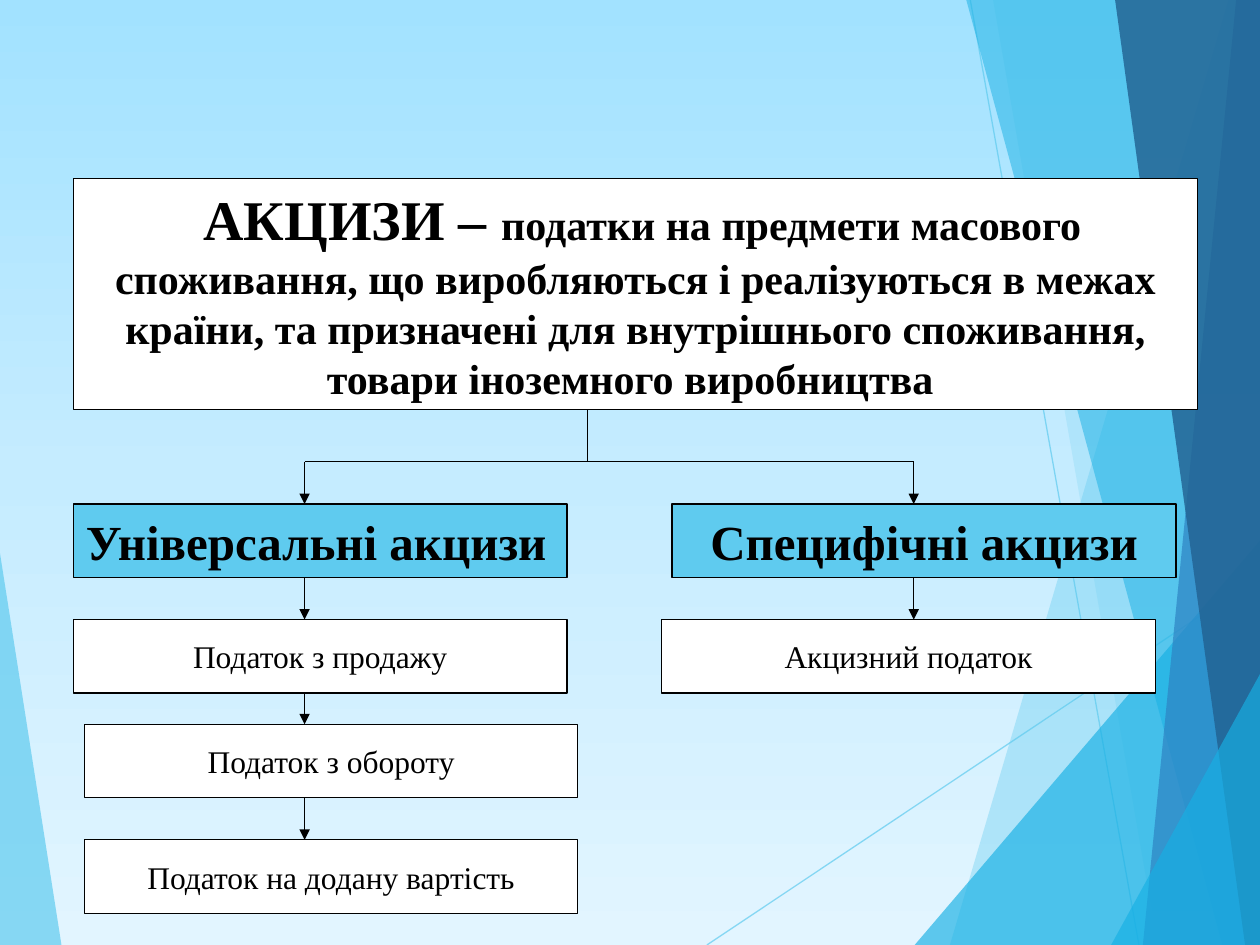
from copy import deepcopy
from pptx import Presentation
from pptx.dml.color import RGBColor
from pptx.enum.shapes import MSO_CONNECTOR, MSO_SHAPE
from pptx.enum.text import MSO_ANCHOR, PP_ALIGN
from pptx.oxml.ns import qn
from pptx.util import Cm, Pt
from lxml.etree import SubElement

# Content
FONT = "Times New Roman"
LEAD = [(" АКЦИЗИ – ", 32, True),
        ("податки на предмети масового споживання, що виробляються і "
         "реалізуються в межах країни, та призначені для внутрішнього "
         "споживання, товари іноземного виробництва ", 24, True)]
# Each branch: arrow axis, then boxes as (left, width, fill, runs)
TREE = [
    (6.14, [
        (1.48, 9.95, "sky", [("Універсальні акцизи", 28, True), (" ", 18, False)]),
        (1.48, 9.95, "white", [("Податок з продажу", 18, False)]),
        (1.7, 9.95, "white", [("Податок з обороту", 18, False)]),
        (1.7, 9.95, "white", [("Податок на додану вартість", 18, False)])]),
    (18.42, [
        (13.55, 10.16, "sky", [("Специфічні акцизи", 28, True)]),
        (13.34, 9.95, "white", [("Акцизний податок", 18, False)])]),
]

# Look and layout, in cm
HEX = {"sky": "5FCBEF", "cyan": "17B0E4", "blue": "2E83C3", "navy": "226292",
       "white": "FFFFFF", "black": "000000",
       "top": "A2E2FF", "mid": "C5ECFF", "low": "E2F5FF"}
WIDE, HIGH = 25.4, 19.05
ROWS = [10.16, 12.49, 14.6, 16.93]
BOX = 1.48
HEAD = (1.48, 3.6, 22.66, 4.66)
STEM, FORK = 11.85, 9.31


def band(top, low):
    """Area right of a slanted edge, given its x at top and bottom."""
    return [(top, 0), (low, HIGH), (WIDE, HIGH), (WIDE, 0)]


def wedge(x, y):
    """Triangle in the bottom right corner."""
    return [(x, HIGH), (WIDE, y), (WIDE, HIGH)]


RAYS = [((14.25, HIGH), (WIDE, 11.61)), ((19.56, 0), (22.96, HIGH))]
FACETS = [
    ([(0, 11.15), (1.24, HIGH), (0, HIGH)], "sky", 70),
    (band(24.77, 19.15), "sky", 36),
    (band(20.02, 23.34), "sky", 20),
    (wedge(18.44, 10.9), "cyan", 66),
    (band(19.48, 24.64), "cyan", 50),
    (band(24.92, 23.04), "blue", 70),
    (band(22.48, 25.1), "navy", 82),
    (wedge(22.4, 13.59), "cyan", 66),
]

deck = Presentation()
deck.slide_width, deck.slide_height = Cm(WIDE), Cm(HIGH)
slide = deck.slides.add_slide(deck.slide_layouts[6])
shapes = slide.shapes


def tint(fill, name, alpha=100):
    fill.solid()
    fill.fore_color.rgb = RGBColor.from_string(HEX[name])
    if alpha < 100:
        for clr in fill._xPr.iter(qn("a:srgbClr")):
            SubElement(clr, qn("a:alpha"), val=str(alpha * 1000))


def line(start, end, name="black", alpha=100, arrow=False):
    item = shapes.add_connector(MSO_CONNECTOR.STRAIGHT,
                                *map(Cm, (*start, *end)))
    item.line.width = Pt(0.75)
    tint(item.line.fill, name, alpha)
    if arrow:
        SubElement(item.line._get_or_add_ln(), qn("a:tailEnd"), type="triangle")
    SubElement(item._element.spPr, qn("a:effectLst"))


def facet(points, name, alpha):
    dots = [(Cm(x), Cm(y)) for x, y in points]
    pen = shapes.build_freeform(*dots[0])
    pen.add_line_segments(dots[1:], close=True)
    item = pen.convert_to_shape()
    item.shadow.inherit = False
    item.line.fill.background()
    tint(item.fill, name, alpha)


def box(place, name, runs, wrap=False):
    item = shapes.add_shape(MSO_SHAPE.RECTANGLE, *map(Cm, place))
    item.shadow.inherit = False
    tint(item.fill, name)
    tint(item.line.fill, "black")
    item.line.width = Pt(0.75)
    frame = item.text_frame
    frame.word_wrap = wrap
    frame.vertical_anchor = MSO_ANCHOR.MIDDLE
    para = frame.paragraphs[0]
    para.alignment = PP_ALIGN.CENTER
    para.font.name = FONT
    para.font.color.rgb = RGBColor.from_string(HEX["black"])
    for text, size, bold in runs:
        run = para.add_run()
        run.text = text
        # Run level too, since the shape style would override the colour
        run.font.name = FONT
        run.font.color.rgb = RGBColor.from_string(HEX["black"])
        run.font.size, run.font.bold = Pt(size), bold


# Background gradient, top to bottom
back = slide.background.fill
back.gradient()
back.gradient_angle = 270
first = back._xPr.find(".//" + qn("a:gs"))
first.addnext(deepcopy(first))
for stop, name, pos in zip(back.gradient_stops, ("top", "mid", "low"), (0, 0.5, 1)):
    stop.color.rgb = RGBColor.from_string(HEX[name])
    stop.position = pos

# Decoration
facet(*FACETS[0])
for start, end in RAYS:
    line(start, end, "sky", 70)
for item in FACETS[1:]:
    facet(*item)

# Definition and fork
box(HEAD, "white", LEAD, wrap=True)
line((STEM, HEAD[1] + HEAD[3]), (STEM, FORK))
line((TREE[0][0], FORK), (TREE[1][0], FORK))

# Branches, each box with the arrow that leads to it
for axis, items in TREE:
    start = FORK
    for top, (left, width, name, runs) in zip(ROWS, items):
        box((left, top, width, BOX), name, runs)
        line((axis, start), (axis, top), arrow=True)
        start = top + BOX

deck.save("out.pptx")
